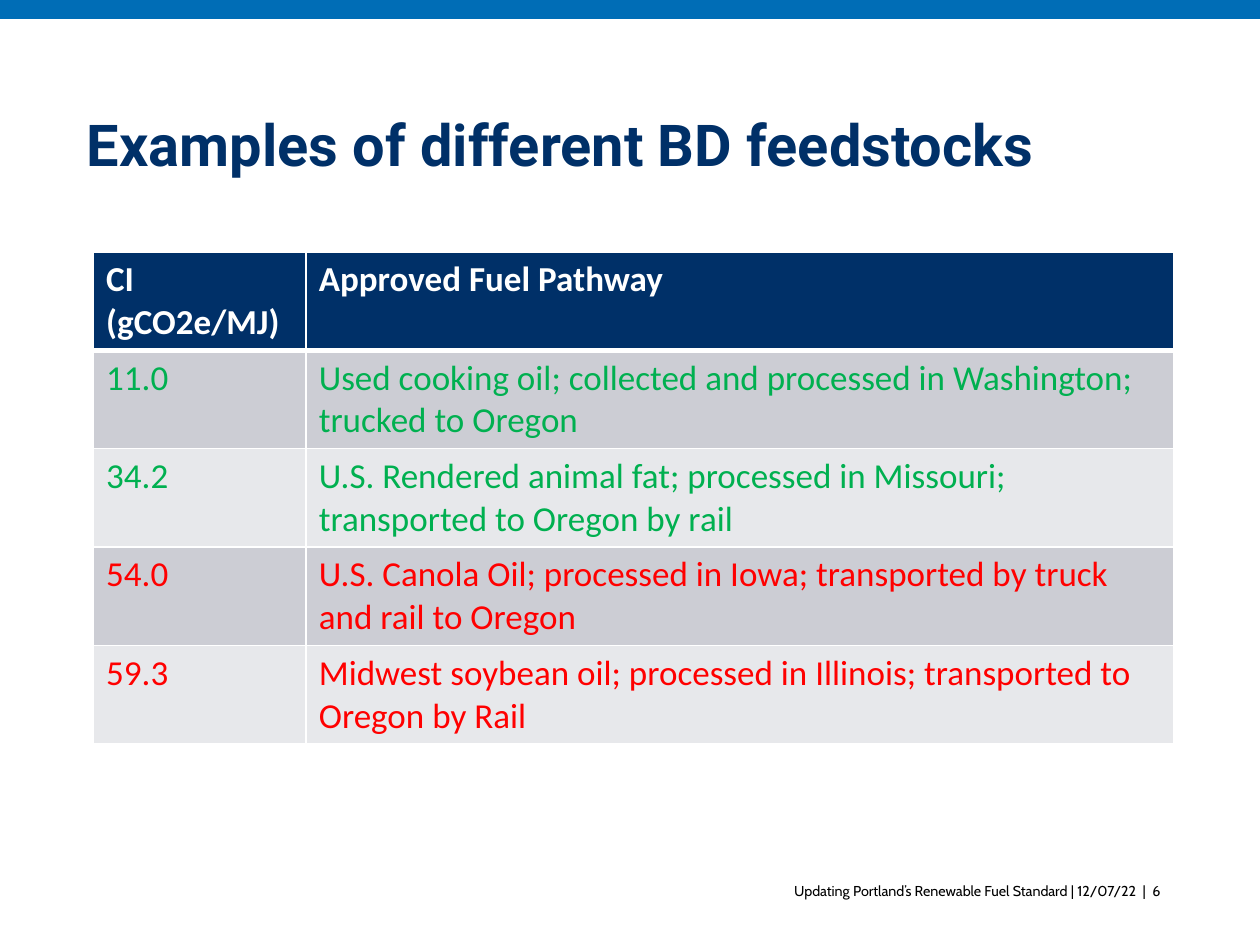
"""Build the slide comparing carbon intensity of biodiesel feedstocks."""

from dataclasses import dataclass

from lxml.etree import SubElement
from pptx import Presentation
from pptx.dml.color import RGBColor
from pptx.enum.shapes import MSO_SHAPE
from pptx.enum.text import MSO_ANCHOR, MSO_AUTO_SIZE, PP_ALIGN
from pptx.oxml.ns import qn
from pptx.slide import Slide
from pptx.table import _Cell
from pptx.text.text import Font
from pptx.util import Pt

NAVY, BLUE, WHITE, BLACK = "003068", "006DB6", "FFFFFF", "000000"
GREEN, RED = "00B050", "FF0000"
BANDS = ("CCCDD4", "E7E8EB")
COLUMN_WIDTHS = (121.5, 496)
ROW_HEIGHT = 55.2


@dataclass(frozen=True)
class Pathway:
    intensity: str
    description: str
    color: str
    bold: bool = False


HEADER = Pathway("CI (gCO2e/MJ)", "Approved Fuel Pathway", WHITE, True)
PATHWAYS = (
    Pathway("11.0", "Used cooking oil; collected and processed in Washington; trucked to Oregon", GREEN),
    Pathway("34.2", "U.S. Rendered animal fat; processed in Missouri; transported to Oregon by rail", GREEN),
    Pathway("54.0", "U.S. Canola Oil; processed in Iowa; transported by truck and rail to Oregon", RED),
    Pathway("59.3", "Midwest soybean oil; processed in Illinois; transported to Oregon by Rail", RED),
)


def rgb(color: str) -> RGBColor:
    return RGBColor.from_string(color)


def style_font(font: Font, name: str, size: float, color: str, bold: bool = False) -> None:
    font.name = name
    font.size = Pt(size)
    font.bold = bold
    font.color.rgb = rgb(color)


def add_top_bar(slide: Slide, width: int) -> None:
    bar = slide.shapes.add_shape(MSO_SHAPE.RECTANGLE, 0, 0, width, Pt(10.8))
    bar.shadow.inherit = False
    bar.fill.solid()
    bar.fill.fore_color.rgb = rgb(BLUE)
    bar.line.fill.background()


def set_title(slide: Slide, text: str) -> None:
    title = slide.shapes.title
    title.left, title.top, title.width, title.height = Pt(42.5), Pt(32.4), Pt(628), Pt(104.4)
    frame = title.text_frame
    frame.text = text
    frame.auto_size = MSO_AUTO_SIZE.NONE
    frame.vertical_anchor = MSO_ANCHOR.MIDDLE
    paragraph = frame.paragraphs[0]
    paragraph.alignment = PP_ALIGN.LEFT
    paragraph.line_spacing = 0.9
    style_font(paragraph.font, "Roboto", 33, NAVY, True)


def set_borders(cell: _Cell, top: float, bottom: float) -> None:
    properties = cell._tc.get_or_add_tcPr()
    for side, width in (("L", 1), ("R", 1), ("T", top), ("B", bottom)):
        line = SubElement(properties, qn(f"a:ln{side}"), w=str(Pt(width)))
        SubElement(SubElement(line, qn("a:solidFill")), qn("a:srgbClr"), val=WHITE)


def fill_cell(cell: _Cell, text: str, pathway: Pathway, fill: str) -> None:
    cell.text = text
    cell.fill.solid()
    cell.fill.fore_color.rgb = rgb(fill)
    style_font(cell.text_frame.paragraphs[0].font, "Calibri", 20, pathway.color, pathway.bold)


def add_pathway_table(slide: Slide) -> None:
    rows = (HEADER, *PATHWAYS)
    table = slide.shapes.add_table(
        len(rows), len(COLUMN_WIDTHS), Pt(53.5), Pt(144), Pt(sum(COLUMN_WIDTHS)), Pt(ROW_HEIGHT * len(rows))
    ).table
    for column, width in zip(table.columns, COLUMN_WIDTHS):
        column.width = Pt(width)
    for row, pathway in enumerate(rows):
        fill = BANDS[(row - 1) % 2] if row else NAVY
        for column, text in enumerate((pathway.intensity, pathway.description)):
            cell = table.cell(row, column)
            set_borders(cell, top=3 if row == 1 else 1, bottom=3 if row == 0 else 1)
            fill_cell(cell, text, pathway, fill)


def add_footer(slide: Slide, text: str) -> None:
    frame = slide.shapes.add_textbox(Pt(266.4), Pt(500.4), Pt(404), Pt(28.8)).text_frame
    frame.word_wrap = True
    frame.text = text
    paragraph = frame.paragraphs[0]
    paragraph.alignment = PP_ALIGN.RIGHT
    style_font(paragraph.font, "Cabin", 8.2, BLACK)


def main() -> None:
    presentation = Presentation()
    presentation.slide_width, presentation.slide_height = Pt(720), Pt(540)
    slide = presentation.slides.add_slide(presentation.slide_layouts.get_by_name("Title Only"))
    add_top_bar(slide, presentation.slide_width)
    set_title(slide, "Examples of different BD feedstocks")
    add_pathway_table(slide)
    add_footer(slide, "Updating Portland’s Renewable Fuel Standard | 12/07/22  |  6")
    presentation.save("out.pptx")


if __name__ == "__main__":
    main()
